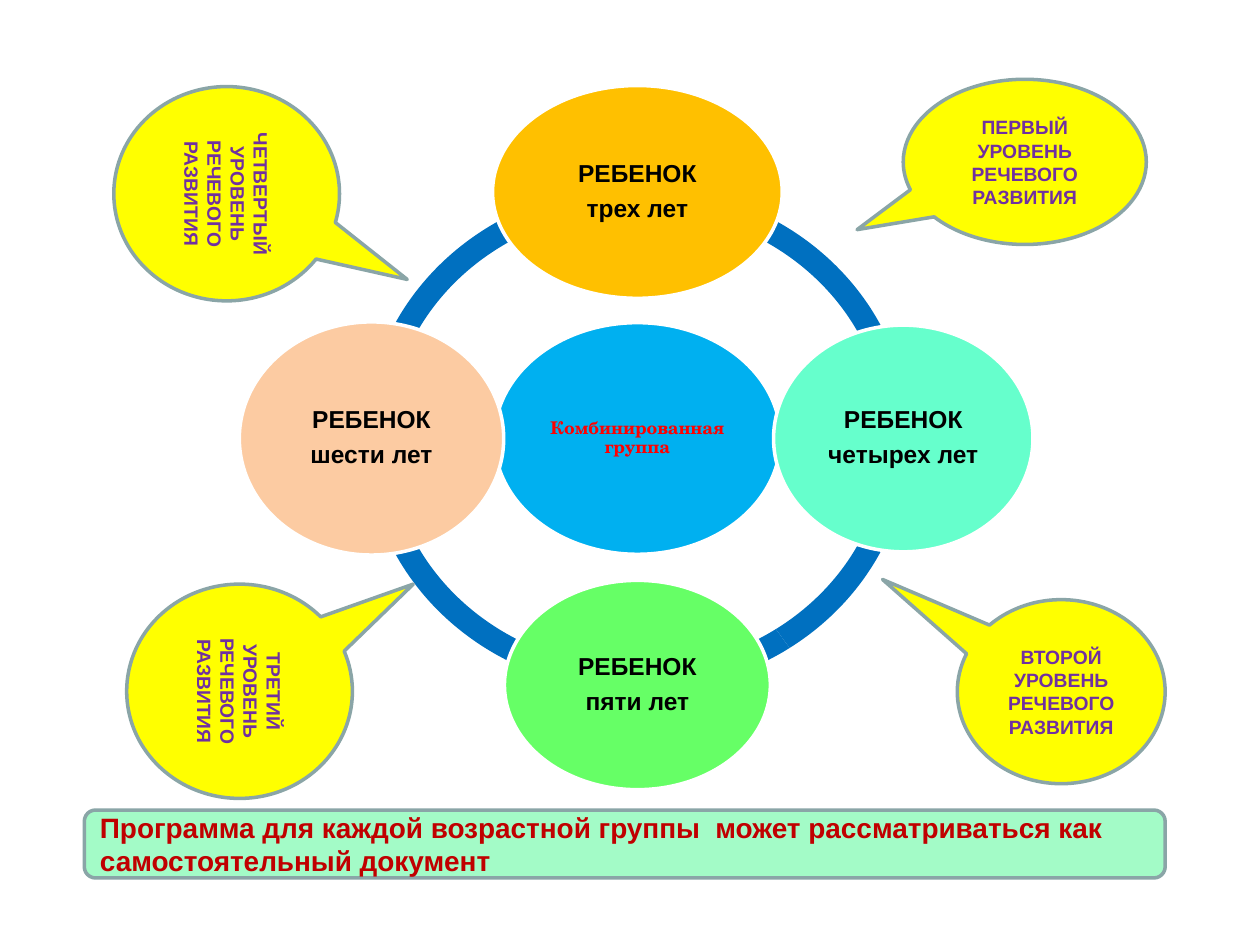
from dataclasses import dataclass

from pptx import Presentation
from pptx.dml.color import RGBColor
from pptx.enum.shapes import MSO_SHAPE
from pptx.enum.text import MSO_ANCHOR, PP_ALIGN
from pptx.util import Cm, Pt

OVAL = MSO_SHAPE.OVAL
ARC = MSO_SHAPE.BLOCK_ARC
CALLOUT = MSO_SHAPE.OVAL_CALLOUT
ROUNDED = MSO_SHAPE.ROUNDED_RECTANGLE
MIDDLE = MSO_ANCHOR.MIDDLE
CENTER, LEFT = PP_ALIGN.CENTER, PP_ALIGN.LEFT


@dataclass(frozen=True)
class TextStyle:
    font: str
    size: float
    color: str
    align: int = CENTER
    line_spacing: float = 1.0
    space_after: float = 0


@dataclass(frozen=True)
class Theme:
    ring: str = "0070C0"
    hub: str = "00B0F0"
    oval_line: str = "FFFFFF"
    callout: str = "FFFF00"
    banner: str = "A3FBC7"
    outline: str = "8AA5A7"
    line_width: float = 2
    hub_text: TextStyle = TextStyle("TeX Gyre Schola", 10, "FF0000", CENTER, 0.9, 3.5)
    age_text: TextStyle = TextStyle("Arial", 14, "000000", CENTER, 0.9, 4.9)
    level_text: TextStyle = TextStyle("Arial", 11, "7030A0")
    banner_text: TextStyle = TextStyle("Arial", 16, "C00000", LEFT)


@dataclass(frozen=True)
class Box:
    left: float
    top: float
    width: float
    height: float


@dataclass(frozen=True)
class Age:
    name: str
    dx: int
    dy: int
    width: float
    height: float
    fill: str


@dataclass(frozen=True)
class Level:
    lines: tuple[str, ...]
    box: Box
    tip: tuple[float, float]
    sideways: bool = False


THEME = Theme()
CENTER_X, CENTER_Y = 12.85, 8.84
ORBIT_X, ORBIT_Y = 5.36, 4.97
RING_WIDTH, RING_HEIGHT, RING_THICKNESS = 10.97, 10.19, 0.046
RING_ANGLES = (162, 108, 54, 0, 162)
OVAL_INSET = (0.04, 0.04)
BOX_INSET = (0.25, 0.13)

AGES = (
    Age("трех лет", 0, -1, 5.84, 4.29, "FFC000"),
    Age("четырех лет", 1, 0, 5.23, 4.57, "66FFCC"),
    Age("пяти лет", 0, 1, 5.36, 4.22, "66FF66"),
    Age("шести лет", -1, 0, 5.33, 4.7, "FCCBA2"),
)
LEVELS = (
    Level(("ПЕРВЫЙ", "УРОВЕНЬ", "РЕЧЕВОГО РАЗВИТИЯ"),
          Box(18.21, 1.6, 4.9, 3.33), (-0.69, 0.41)),
    Level(("ВТОРОЙ УРОВЕНЬ РЕЧЕВОГО РАЗВИТИЯ",),
          Box(19.3, 12.09, 4.19, 3.71), (-0.86, -0.61)),
    Level(("ТРЕТИЙ УРОВЕНЬ РЕЧЕВОГО РАЗВИТИЯ",),
          Box(2.67, 11.66, 4.32, 4.55), (0.5, 0.77), True),
    Level(("ЧЕТВЕРТЫЙ УРОВЕНЬ РЕЧЕВОГО РАЗВИТИЯ",),
          Box(2.41, 1.63, 4.32, 4.55), (-0.4, 0.8), True),
)
BANNER = "Программа для каждой возрастной группы  может рассматриваться как  самостоятельный документ"


def centered(x: float, y: float, width: float, height: float) -> Box:
    return Box(x - width / 2, y - height / 2, width, height)


def add_shape(shapes, kind, box: Box, fill: str, line: str | None = None):
    sp = shapes.add_shape(kind, Cm(box.left), Cm(box.top), Cm(box.width), Cm(box.height))
    sp.shadow.inherit = False
    sp.fill.solid()
    sp.fill.fore_color.rgb = RGBColor.from_string(fill)
    if line:
        sp.line.color.rgb = RGBColor.from_string(line)
        sp.line.width = Pt(THEME.line_width)
    else:
        sp.line.fill.background()
    return sp


def write(sp, lines: tuple[str, ...], style: TextStyle, inset: tuple[float, float]) -> None:
    tf = sp.text_frame
    tf.word_wrap = True
    tf.vertical_anchor = MIDDLE
    tf.margin_left = tf.margin_right = Cm(inset[0])
    tf.margin_top = tf.margin_bottom = Cm(inset[1])
    tf.text = "\n".join(lines)
    for p in tf.paragraphs:
        p.alignment = style.align
        p.line_spacing = style.line_spacing
        p.space_after = Pt(style.space_after)
        p.font.name = style.font
        p.font.size = Pt(style.size)
        p.font.bold = True
        p.font.color.rgb = RGBColor.from_string(style.color)


def add_ring(shapes) -> None:
    box = centered(CENTER_X, CENTER_Y, RING_WIDTH, RING_HEIGHT)
    for end, start in zip(RING_ANGLES, RING_ANGLES[1:]):
        sp = add_shape(shapes, ARC, box, THEME.ring)
        # Angles are stored in 1/60000 degree, adjustments in 1/100000.
        sp.adjustments[0] = start * 0.6
        sp.adjustments[1] = end * 0.6
        sp.adjustments[2] = RING_THICKNESS


def add_hub(shapes) -> None:
    box = centered(CENTER_X, CENTER_Y, 5.77, 4.67)
    sp = add_shape(shapes, OVAL, box, THEME.hub, THEME.oval_line)
    write(sp, ("Комбинированная группа",), THEME.hub_text, OVAL_INSET)


def add_age(shapes, age: Age) -> None:
    box = centered(CENTER_X + age.dx * ORBIT_X, CENTER_Y + age.dy * ORBIT_Y,
                   age.width, age.height)
    sp = add_shape(shapes, OVAL, box, age.fill, THEME.oval_line)
    write(sp, ("РЕБЕНОК", age.name), THEME.age_text, OVAL_INSET)


def add_level(shapes, level: Level) -> None:
    sp = add_shape(shapes, CALLOUT, level.box, THEME.callout, THEME.outline)
    sp.adjustments[0], sp.adjustments[1] = level.tip
    write(sp, level.lines, THEME.level_text, BOX_INSET)
    if level.sideways:
        sp.rotation = 270
        body = sp.text_frame._txBody.bodyPr
        body.set("rot", "5400000")
        body.set("vert", "vert")


def add_banner(shapes) -> None:
    sp = add_shape(shapes, ROUNDED, Box(1.7, 16.33, 21.79, 1.37), THEME.banner, THEME.outline)
    write(sp, (BANNER,), THEME.banner_text, BOX_INSET)


def main() -> None:
    prs = Presentation()
    prs.slide_width, prs.slide_height = Cm(25.4), Cm(19.05)
    shapes = prs.slides.add_slide(prs.slide_layouts[6]).shapes
    add_ring(shapes)
    add_hub(shapes)
    for age in AGES:
        add_age(shapes, age)
    for level in LEVELS:
        add_level(shapes, level)
    add_banner(shapes)
    prs.save("out.pptx")


if __name__ == "__main__":
    main()
